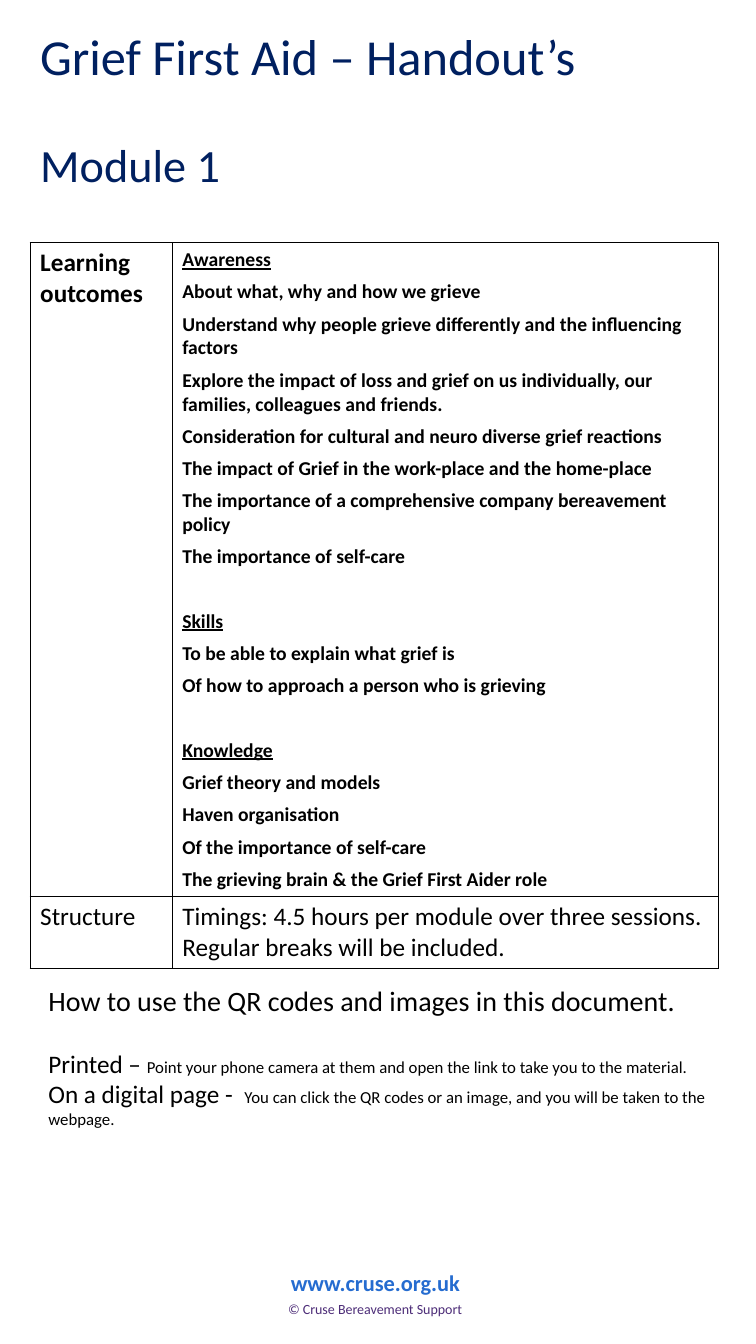
from lxml import etree
from pptx import Presentation
from pptx.dml.color import RGBColor
from pptx.enum.text import MSO_ANCHOR, MSO_AUTO_SIZE as AUTO, PP_ALIGN as AL
from pptx.oxml.ns import qn
from pptx.util import Cm, Pt

NAVY = RGBColor(0x00, 0x20, 0x60)
BLUE = RGBColor(0x25, 0x6C, 0xD0)
PURPLE = RGBColor(0x4D, 0x2D, 0x78)
BLACK = RGBColor(0, 0, 0)

OUTCOMES = {
    "Awareness": [
        "About what, why and how we grieve",
        "Understand why people grieve differently and the influencing factors",
        "Explore the impact of loss and grief on us individually, our families, colleagues and friends.",
        "Consideration for cultural and neuro diverse grief reactions",
        "The impact of Grief in the work-place and the home-place",
        "The importance of a comprehensive company bereavement policy",
        "The importance of self-care",
    ],
    "Skills": [
        "To be able to explain what grief is",
        "Of how to approach a person who is grieving",
    ],
    "Knowledge": [
        "Grief theory and models",
        "Haven organisation",
        "Of the importance of self-care",
        "The grieving brain & the Grief First Aider role",
    ],
}
USAGE = [
    [("How to use the QR codes and images in this document.", 20)],
    [("Printed – ", 18),
     ("Point your phone camera at them and open the link to take you to the material.", 12)],
    [("On a digital page -  ", 18),
     ("You can click the QR codes or an image, and you will be taken to the webpage.", 12)],
]


def add_run(p, text, size, color=BLACK, bold=False, underline=False):
    r = p.add_run()
    r.text = text
    r.font.name = "Calibri"
    r.font.size = Pt(size)
    r.font.bold = bold
    r.font.underline = underline
    r.font.color.rgb = color


def add_box(left, top, width, height):
    tf = s.shapes.add_textbox(Cm(left), Cm(top), Cm(width), Cm(height)).text_frame
    tf.word_wrap = True
    tf.auto_size = AUTO.SHAPE_TO_FIT_TEXT
    return tf


prs = Presentation()
prs.slide_width, prs.slide_height = Cm(19.05), Cm(33.87)
s = prs.slides.add_slide(prs.slide_layouts[5])

p = add_box(7.01, 31.85, 4.9, 0.94).paragraphs[0]
p.alignment = AL.CENTER
add_run(p, "www.cruse.org.uk", 16, BLUE, bold=True)
p = add_box(7.01, 32.64, 5.13, 0.68).paragraphs[0]
add_run(p, "© Cruse Bereavement Support", 10, PURPLE)

title = s.shapes.title
title.left, title.top, title.width, title.height = Cm(0.76), Cm(3.23), Cm(15.44), Cm(1.96)
tf = title.text_frame
tf.auto_size = AUTO.NONE
tf.vertical_anchor = MSO_ANCHOR.MIDDLE
p = tf.paragraphs[0]
p.alignment = AL.LEFT
p.line_spacing = 0.9
add_run(p, "Module 1", 33, NAVY)

table = s.shapes.add_table(2, 2, Cm(0.76), Cm(6.12), Cm(17.35), Cm(18.28)).table
table.first_row = table.horz_banding = False
table.columns[0].width, table.columns[1].width = Cm(3.58), Cm(13.77)
table.rows[0].height, table.rows[1].height = Cm(16.48), Cm(1.8)
for cell in table.iter_cells():
    tcPr = cell._tc.get_or_add_tcPr()
    for side in ("a:lnL", "a:lnR", "a:lnT", "a:lnB"):
        ln = etree.SubElement(tcPr, qn(side), w=str(Pt(1)))
        fill = etree.SubElement(ln, qn("a:solidFill"))
        etree.SubElement(fill, qn("a:srgbClr"), val=str(BLACK))
    cell.fill.background()

for row, col, text, bold in [
    (0, 0, "Learning outcomes", True),
    (1, 0, "Structure", False),
    (1, 1, "Timings: 4.5 hours per module over three sessions. Regular breaks will be included.", False),
]:
    add_run(table.cell(row, col).text_frame.paragraphs[0], text, 18, bold=bold)

tf = table.cell(0, 1).text_frame
p = tf.paragraphs[0]
for heading, items in OUTCOMES.items():
    if heading != "Awareness":
        p = tf.add_paragraph()
        p.space_before = Pt(23)
    p.space_after = Pt(6)
    add_run(p, heading, 14, bold=True, underline=True)
    for item in items:
        p = tf.add_paragraph()
        p.space_after = Pt(6)
        add_run(p, item, 14, bold=True)

p = add_box(0.76, 0.51, 16.54, 1.8).paragraphs[0]
add_run(p, "Grief First Aid – Handout’s", 36, NAVY)

tf = add_box(0.97, 24.66, 17.12, 5.46)
for i, parts in enumerate(USAGE):
    p = tf.add_paragraph() if i else tf.paragraphs[0]
    if i == 1:
        p.space_before = Pt(22)
    for text, size in parts:
        add_run(p, text, size)

prs.save("out.pptx")
